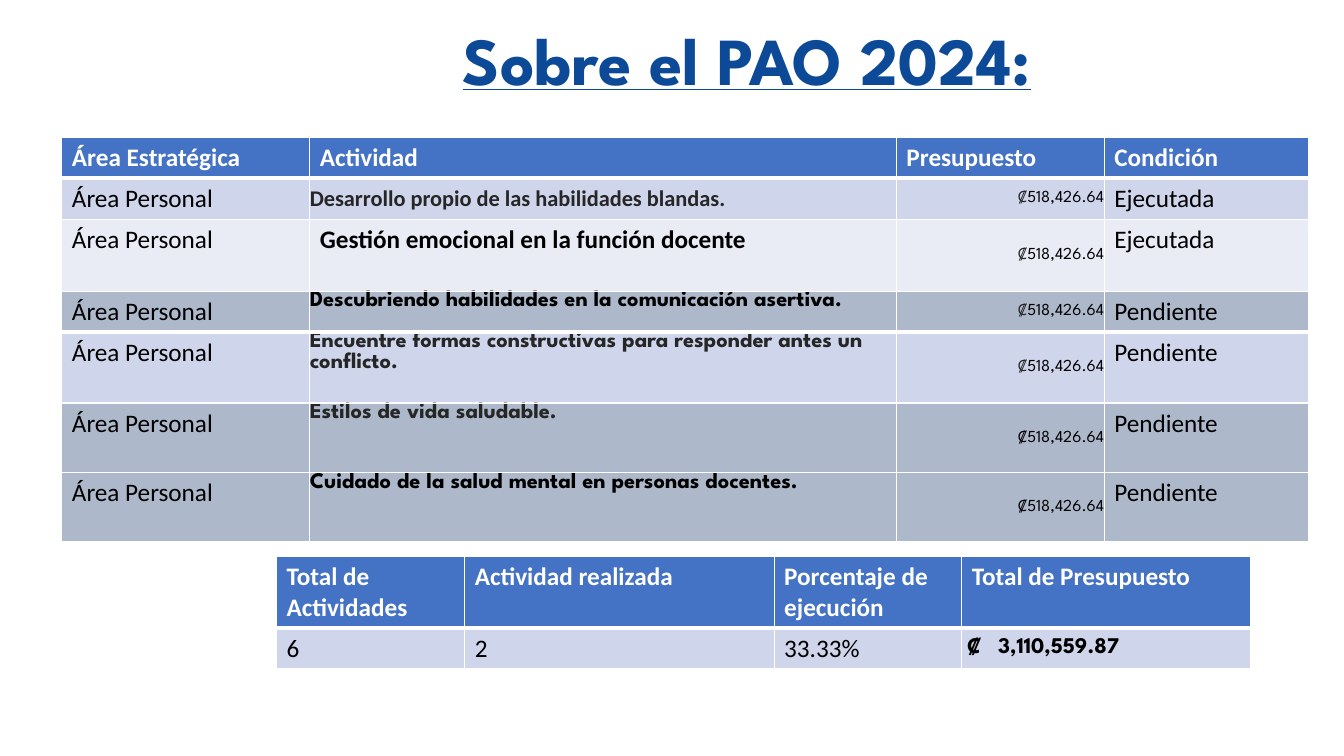
from dataclasses import dataclass

from lxml import etree
from pptx import Presentation
from pptx.dml.color import RGBColor
from pptx.enum import text
from pptx.oxml import ns
from pptx.util import Pt


@dataclass(frozen=True)
class Theme:
    body_font: str = "Calibri"
    display_font: str = "League Spartan"
    title_blue: str = "0C4A97"
    header_blue: str = "4472C4"
    band: str = "CFD5EA"
    pale_band: str = "E9EBF5"
    grey_band: str = "ADB9CA"
    white: str = "FFFFFF"
    black: str = "000000"
    charcoal: str = "262626"
    title_size: float = 48
    body_size: float = 18
    activity_size: float = 16
    amount_size: float = 12
    thin: float = 1
    thick: float = 3


THEME = Theme()


@dataclass(frozen=True)
class Style:
    size: float = THEME.body_size
    font: str = THEME.body_font
    color: str = THEME.black
    bold: bool = False
    inset: bool = True
    anchor: text.MSO_ANCHOR = text.MSO_ANCHOR.TOP
    align: text.PP_ALIGN = text.PP_ALIGN.LEFT
    left: float = 0
    tab: float = 0


MIDDLE = text.MSO_ANCHOR.MIDDLE
BODY = Style()
HEADER = Style(color=THEME.white, bold=True)
ACTIVITY = Style(THEME.activity_size, THEME.display_font, bold=True, inset=False)
ACTIVITY_GREY = Style(THEME.activity_size, THEME.display_font, THEME.charcoal, True, False)
ACTIVITY_PLAIN = Style(THEME.activity_size, color=THEME.charcoal, bold=True,
                       inset=False, anchor=MIDDLE)
ACTIVITY_LARGE = Style(bold=True)
AMOUNT = Style(THEME.amount_size, THEME.display_font, inset=False,
               anchor=MIDDLE, align=text.PP_ALIGN.RIGHT)
TOTAL = Style(THEME.activity_size, THEME.display_font, bold=True, inset=False,
              anchor=MIDDLE, left=4, tab=22)


@dataclass(frozen=True)
class Entry:
    """Text of one cell; sign is a leading run with its own colour."""
    content: str
    style: Style = BODY
    sign: str = ""
    sign_color: str = THEME.black


@dataclass(frozen=True)
class Row:
    height: float
    fill: str
    entries: list[Entry]
    bottom: float = THEME.thin


@dataclass(frozen=True)
class Block:
    left: float
    top: float
    widths: tuple[float, ...]
    rows: list[Row]


def header(height: float, *labels: str) -> Row:
    return Row(height, THEME.header_blue, [Entry(label, HEADER) for label in labels], THEME.thick)


def plan(height: float, fill: str, activity: str, style: Style, status: str,
         sign_color: str = THEME.charcoal, bottom: float = THEME.thin) -> Row:
    return Row(height, fill, [Entry("Área Personal"), Entry(activity, style),
                              Entry("518,426.64", AMOUNT, "₡", sign_color),
                              Entry(status)], bottom)


PLAN_LEFT = 44.2
PLAN_WIDTHS = (177.1, 419, 148.5, 146.2)
LOW, TALL = 29.2, 50.2
BLOCKS = [
    Block(PLAN_LEFT, 98.2, PLAN_WIDTHS, [
        header(LOW, "Área Estratégica", "Actividad", "Presupuesto", "Condición"),
        plan(LOW, THEME.band, "Desarrollo propio de las habilidades blandas.",
             ACTIVITY_PLAIN, "Ejecutada"),
        plan(51.5, THEME.pale_band, "Gestión emocional en la función docente",
             ACTIVITY_LARGE, "Ejecutada"),
    ]),
    Block(PLAN_LEFT, 208.1, PLAN_WIDTHS, [
        plan(LOW, THEME.grey_band, "Descubriendo habilidades en la comunicación asertiva.",
             ACTIVITY, "Pendiente", bottom=THEME.thick),
        plan(TALL, THEME.band,
             "Encuentre formas constructivas para responder antes un conflicto.",
             ACTIVITY_GREY, "Pendiente"),
    ]),
    Block(PLAN_LEFT, 288, PLAN_WIDTHS, [
        plan(TALL, THEME.grey_band, "Estilos de vida saludable.",
             ACTIVITY_GREY, "Pendiente", THEME.black, THEME.thick),
    ]),
    Block(PLAN_LEFT, 337.5, PLAN_WIDTHS, [
        plan(TALL, THEME.grey_band, "Cuidado de la salud mental en personas docentes.",
             ACTIVITY, "Pendiente", THEME.black, THEME.thick),
    ]),
    Block(197.5, 397.5, (134.5, 221, 134, 206.5), [
        header(50.8, "Total de Actividades", "Actividad realizada",
               "Porcentaje de ejecución", "Total de Presupuesto"),
        Row(LOW, THEME.band, [Entry("6"), Entry("2"), Entry("33.33%"),
                              Entry("₡\t3,110,559.87", TOTAL)]),
    ]),
]


def set_font(font, style: Style, color: str) -> None:
    font.name, font.size, font.bold = style.font, Pt(style.size), style.bold
    font.color.rgb = RGBColor.from_string(color)


def set_borders(cell, bottom: float) -> None:
    properties = cell._tc.get_or_add_tcPr()
    for side in "LRTB":
        width = bottom if side == "B" else THEME.thin
        line = etree.SubElement(properties, ns.qn(f"a:ln{side}"), w=str(Pt(width)))
        fill = etree.SubElement(line, ns.qn("a:solidFill"))
        etree.SubElement(fill, ns.qn("a:srgbClr"), val=THEME.white)


def fill_cell(cell, entry: Entry, row: Row) -> None:
    style = entry.style
    set_borders(cell, row.bottom)
    cell.fill.solid()
    cell.fill.fore_color.rgb = RGBColor.from_string(row.fill)
    cell.vertical_anchor = style.anchor
    if not style.inset:
        cell.margin_left = Pt(style.left)
        cell.margin_right = cell.margin_top = cell.margin_bottom = 0
    paragraph = cell.text_frame.paragraphs[0]
    paragraph.alignment = style.align
    if style.tab:
        tabs = etree.SubElement(paragraph._p.get_or_add_pPr(), ns.qn("a:tabLst"))
        etree.SubElement(tabs, ns.qn("a:tab"), pos=str(Pt(style.tab)), algn="l")
    for content, color in ((entry.sign, entry.sign_color), (entry.content, style.color)):
        if content:
            run = paragraph.add_run()
            run.text = content
            set_font(run.font, style, color)


def draw_block(slide, block: Block) -> None:
    table = slide.shapes.add_table(
        len(block.rows), len(block.widths), Pt(block.left), Pt(block.top),
        Pt(sum(block.widths)), Pt(sum(row.height for row in block.rows))).table
    table.first_row = table.horz_banding = False
    for column, width in zip(table.columns, block.widths):
        column.width = Pt(width)
    for index, row in enumerate(block.rows):
        table.rows[index].height = Pt(row.height)
        for column, entry in enumerate(row.entries):
            fill_cell(table.cell(index, column), entry, row)


def draw_title(slide) -> None:
    title = slide.shapes.title
    title.left, title.top, title.width, title.height = Pt(173.5), Pt(13), Pt(720), Pt(62)
    frame = title.text_frame
    frame.text = "Sobre el PAO 2024:"
    frame.word_wrap = True
    frame.auto_size = text.MSO_AUTO_SIZE.NONE
    frame.vertical_anchor = text.MSO_ANCHOR.BOTTOM
    paragraph = frame.paragraphs[0]
    paragraph.alignment = text.PP_ALIGN.CENTER
    paragraph.line_spacing = 0.9
    font = paragraph.runs[0].font
    set_font(font, Style(THEME.title_size, THEME.display_font, bold=True), THEME.title_blue)
    font.underline = True


def main() -> None:
    deck = Presentation()
    deck.slide_width, deck.slide_height = Pt(960), Pt(540)
    slide = deck.slides.add_slide(deck.slide_layouts[5])
    draw_title(slide)
    for block in BLOCKS:
        draw_block(slide, block)
    deck.save("out.pptx")


if __name__ == "__main__":
    main()
